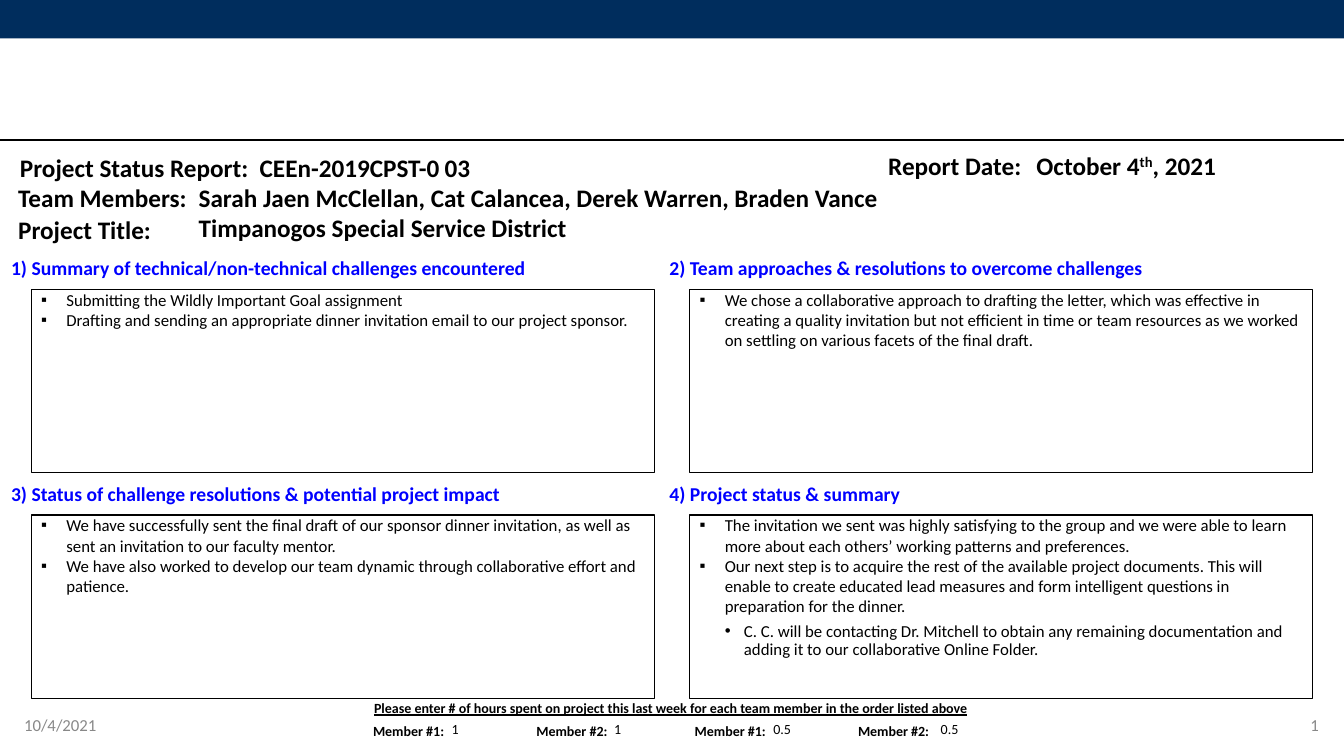
from lxml import etree
from pptx import Presentation
from pptx.dml.color import RGBColor
from pptx.enum.shapes import MSO_CONNECTOR, MSO_SHAPE
from pptx.enum.text import MSO_ANCHOR, PP_ALIGN
from pptx.oxml.ns import qn
from pptx.util import Inches, Pt

LEFT, CENTER, RIGHT = PP_ALIGN.LEFT, PP_ALIGN.CENTER, PP_ALIGN.RIGHT
TOP, MIDDLE = MSO_ANCHOR.TOP, MSO_ANCHOR.MIDDLE
FONT = "Calibri"
COLORS = {"banner": "002D5D", "text": "000000", "heading": "0000FF", "footer": "888888"}

# Content: header text with left, top, width, alignment and anchor
HEADER = [
    ("Project Status Report:  CEEn-2019CPST-0", 0.17, 1.51, 4.22, CENTER, MIDDLE),
    ("03", 4.41, 1.51, 3.21, LEFT, TOP),
    ("Team Members:", 0.18, 1.81, 1.69, LEFT, MIDDLE),
    ("Sarah Jaen McClellan, Cat Calancea, Derek Warren, Braden Vance",
     1.97, 1.81, 11.18, LEFT, TOP),
    ("Project Title:", 0.18, 2.13, 1.69, LEFT, MIDDLE),
    ("Timpanogos Special Service District", 1.97, 2.11, 11.18, LEFT, TOP),
    ("Report Date:", 8.81, 1.49, 1.4, LEFT, MIDDLE),
]
REPORT_DATE = ("October 4", "th", ", 2021")

# Panels in reading order: heading, then (level, text) bullets
PANELS = [
    ("1) Summary of technical/non-technical challenges encountered", [
        (0, "Submitting the Wildly Important Goal assignment"),
        (0, "Drafting and sending an appropriate dinner invitation email to our project sponsor."),
    ]),
    ("2) Team approaches & resolutions to overcome challenges", [
        (0, "We chose a collaborative approach to drafting the letter, which was effective in "
            "creating a quality invitation but not efficient in time or team resources as we "
            "worked on settling on various facets of the final draft."),
    ]),
    ("3) Status of challenge resolutions & potential project impact", [
        (0, "We have successfully sent the final draft of our sponsor dinner invitation, as well "
            "as sent an invitation to our faculty mentor."),
        (0, "We have also worked to develop our team dynamic through collaborative effort and "
            "patience."),
    ]),
    ("4) Project status & summary", [
        (0, "The invitation we sent was highly satisfying to the group and we were able to learn "
            "more about each others’ working patterns and preferences."),
        (0, "Our next step is to acquire the rest of the available project documents. This will "
            "enable to create educated lead measures and form intelligent questions in "
            "preparation for the dinner."),
        (1, "C. C. will be contacting Dr. Mitchell to obtain any remaining documentation and "
            "adding it to our collaborative Online Folder."),
    ]),
]
COLUMNS = (0.11, 6.64)
ROWS = (2.54, 4.78)
PANEL_WIDTH, PANEL_HEIGHT = 6.18, 1.82
BULLETS = {0: ("▪", 0.25, 0.25), 1: ("•", 0.44, 0.19)}  # mark, margin, hanging indent

# Hours: label, label left, hours, hours left
HOURS_PROMPT = ("Please enter # of hours spent on project this last week "
                "for each team member in the order listed above")
HOURS = [
    ("Member #1:", 3.7, "1", 4.48),
    ("Member #2:", 5.32, "1", 6.09),
    ("Member #1:", 6.89, "0.5", 7.67),
    ("Member #2:", 8.51, "0.5", 9.33),
]
FOOTERS = [("10/4/2021", 0.14, LEFT), ("1", 10.18, RIGHT)]


def color(name):
    return RGBColor.from_string(COLORS[name])


def style(font, size, name="text", bold=False, underline=None):
    font.name, font.size, font.bold = FONT, Pt(size), bold
    font.underline = underline
    font.color.rgb = color(name)


def set_frame(frame, anchor=TOP, side=0, edge=0):
    frame.word_wrap = True
    frame.vertical_anchor = anchor
    frame.margin_left = frame.margin_right = Inches(side)
    frame.margin_top = frame.margin_bottom = Inches(edge)


def add_text(slide, text, left, top, width, height, size, align=LEFT, anchor=TOP,
             side=0, edge=0, **look):
    box = slide.shapes.add_textbox(Inches(left), Inches(top), Inches(width), Inches(height))
    set_frame(box.text_frame, anchor, side, edge)
    box.text_frame.text = text
    paragraph = box.text_frame.paragraphs[0]
    paragraph.alignment = align
    for run in paragraph.runs:
        style(run.font, size, **look)
    return paragraph


def add_rectangle(slide, left, top, width, height):
    shape = slide.shapes.add_shape(
        MSO_SHAPE.RECTANGLE, Inches(left), Inches(top), Inches(width), Inches(height))
    shape.shadow.inherit = False
    return shape


def set_bullet(paragraph, level):
    mark, margin, indent = BULLETS[level]
    paragraph.level = level
    properties = paragraph._p.get_or_add_pPr()
    properties.set("marL", str(Inches(margin)))
    properties.set("indent", str(-Inches(indent)))
    if level:
        paragraph.line_spacing = 0.9
        paragraph.space_before = Pt(5)
    bullet_color = etree.SubElement(properties, qn("a:buClr"))
    etree.SubElement(bullet_color, qn("a:srgbClr")).set("val", COLORS["text"])
    etree.SubElement(properties, qn("a:buFont")).set("typeface", "Arial")
    etree.SubElement(properties, qn("a:buChar")).set("char", mark)


def add_panel(slide, left, top, heading, bullets):
    add_text(slide, heading, left, top, 6, 0.24, 14, name="heading", bold=True)
    panel = add_rectangle(slide, left + 0.2, top + 0.33, PANEL_WIDTH, PANEL_HEIGHT)
    panel.fill.background()
    panel.line.color.rgb = color("text")
    panel.line.width = Pt(1)
    frame = panel.text_frame
    set_frame(frame, side=0.1)
    frame.text = "\n".join(text for _, text in bullets)
    for paragraph, (level, _) in zip(frame.paragraphs, bullets):
        paragraph.alignment = LEFT
        set_bullet(paragraph, level)
        style(paragraph.runs[0].font, 12)


def main():
    presentation = Presentation()
    presentation.slide_width, presentation.slide_height = Inches(13.33), Inches(7.5)
    slide = presentation.slides.add_slide(presentation.slide_layouts[6])

    # Banner and rule
    banner = add_rectangle(slide, 0, 0, 13.33, 0.38)
    banner.fill.solid()
    banner.fill.fore_color.rgb = color("banner")
    banner.line.fill.background()
    rule = slide.shapes.add_connector(
        MSO_CONNECTOR.STRAIGHT, 0, Inches(1.39), Inches(13.33), Inches(1.39))
    rule.line.color.rgb = color("text")
    rule.line.width = Pt(2)
    etree.SubElement(rule._element.spPr, qn("a:effectLst"))

    # Header
    for text, left, top, width, align, anchor in HEADER:
        add_text(slide, text, left, top, width, 0.3, 18, align, anchor, bold=True)
    day, suffix, year = REPORT_DATE
    date = add_text(slide, day, 10.28, 1.49, 2.87, 0.3, 18, bold=True)
    for text, baseline in ((suffix, 30000), (year, 0)):
        run = date.add_run()
        run.text = text
        style(run.font, 18, bold=True)
        run._r.get_or_add_rPr().set("baseline", str(baseline))

    # Four panels in a two by two grid
    for index, (heading, bullets) in enumerate(PANELS):
        row, column = divmod(index, 2)
        add_panel(slide, COLUMNS[column], ROWS[row], heading, bullets)

    # Hours per member
    add_text(slide, HOURS_PROMPT, 3.21, 6.94, 6.88, 0.26, 10, CENTER, bold=True, underline=True)
    for label, label_left, hours, hours_left in HOURS:
        add_text(slide, label, label_left, 7.17, 0.75, 0.2, 10, bold=True)
        value = add_text(slide, hours, hours_left, 7.13, 0.35, 0.23, 10, anchor=MIDDLE)
        value.line_spacing = 0.9

    # Date and slide number
    for text, left, align in FOOTERS:
        add_text(slide, text, left, 6.99, 3, 0.4, 12, align, MIDDLE, 0.1, 0.05, name="footer")

    presentation.save("out.pptx")


if __name__ == "__main__":
    main()
